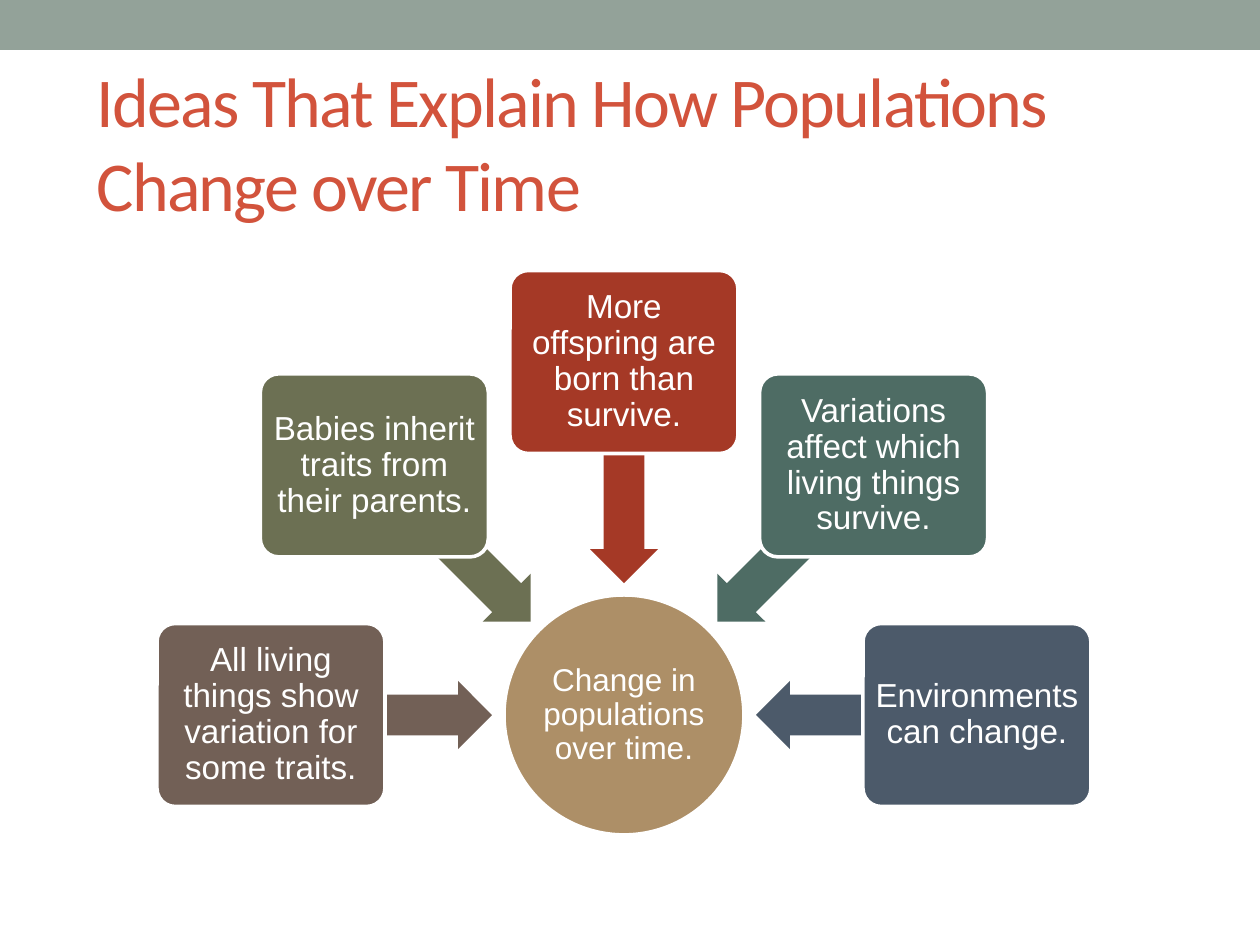
from dataclasses import dataclass
from math import cos, radians, sin

from pptx import Presentation
from pptx.dml.color import RGBColor
from pptx.enum.shapes import MSO_SHAPE
from pptx.enum.text import MSO_ANCHOR, MSO_AUTO_SIZE, PP_ALIGN
from pptx.util import Pt

EMU_PER_PX = 914400 / 126


@dataclass(frozen=True)
class Theme:
    band: str = "93A299"
    title: str = "D2533C"
    hub: str = "AD8F67"
    white: str = "FFFFFF"
    title_font: str = "Calibri"
    body_font: str = "Arial"
    title_size: int = 40
    hub_size: int = 18
    idea_size: int = 19
    outline: float = 2.08


THEME = Theme()

HUB_CENTER = (624, 715)
HUB_DIAMETER = 240
IDEA_SIZE = (228, 183)
IDEA_RADIUS = 353
ARROW_SIZE = (220, 68)
ARROW_RADIUS = 242
FIRST_ANGLE, ANGLE_STEP = 180, 45

# Clockwise from the left of the hub
IDEAS = [
    ("All living things show variation for some traits.", "726056"),
    ("Babies inherit traits from their parents.", "6C7053"),
    ("More offspring are born than survive.", "A53926"),
    ("Variations affect which living things survive.", "4E6C64"),
    ("Environments can change.", "4C5A6A"),
]


def px(length):
    return round(length * EMU_PER_PX)


def color(value):
    return RGBColor.from_string(value)


def write_text(shape, text, *, font, size, fill, align=PP_ALIGN.CENTER,
               inset=None, line_spacing=1.0, tracking=None):
    """Fill a shape with one formatted paragraph; tracking is in points."""
    frame = shape.text_frame
    frame.word_wrap = True
    frame.auto_size = MSO_AUTO_SIZE.NONE
    frame.vertical_anchor = MSO_ANCHOR.MIDDLE
    if inset is not None:
        frame.margin_left = frame.margin_right = px(inset)
        frame.margin_top = frame.margin_bottom = px(inset)
    paragraph = frame.paragraphs[0]
    paragraph.alignment = align
    paragraph.line_spacing = line_spacing
    run = paragraph.add_run()
    run.text = text
    run.font.name = font
    run.font.size = Pt(size)
    run.font.color.rgb = color(fill)
    if tracking is not None:
        run.font._element.set("spc", str(round(tracking * 100)))


def add_block(shapes, kind, center, size, fill, outline=None):
    """Add a filled preset shape placed by its center."""
    (x, y), (width, height) = center, size
    shape = shapes.add_shape(kind, px(x - width / 2), px(y - height / 2),
                             px(width), px(height))
    shape.shadow.inherit = False
    shape.fill.solid()
    shape.fill.fore_color.rgb = color(fill)
    if outline:
        shape.line.color.rgb = color(outline)
        shape.line.width = Pt(THEME.outline)
    else:
        shape.line.fill.background()
    return shape


def around_hub(angle, radius):
    x, y = HUB_CENTER
    return (x + radius * cos(radians(angle)), y + radius * sin(radians(angle)))


def add_hub(shapes, text):
    hub = add_block(shapes, MSO_SHAPE.OVAL, HUB_CENTER,
                    (HUB_DIAMETER, HUB_DIAMETER), THEME.hub, THEME.white)
    write_text(hub, text, font=THEME.body_font, size=THEME.hub_size,
               fill=THEME.white, inset=1, line_spacing=0.9)


def add_idea(shapes, text, fill, angle):
    """Add an idea box and, behind it, its arrow pointing at the hub."""
    arrow = add_block(shapes, MSO_SHAPE.LEFT_ARROW,
                      around_hub(angle, ARROW_RADIUS), ARROW_SIZE, fill)
    arrow.adjustments[0] = 0.6
    arrow.adjustments[1] = 0.5
    arrow.rotation = angle % 360
    box = add_block(shapes, MSO_SHAPE.ROUNDED_RECTANGLE,
                    around_hub(angle, IDEA_RADIUS), IDEA_SIZE, fill, THEME.white)
    box.adjustments[0] = 0.1
    write_text(box, text, font=THEME.body_font, size=THEME.idea_size,
               fill=THEME.white, inset=5, line_spacing=0.9)


def set_title(slide, text):
    title = slide.shapes.title
    title.left, title.top = px(84), px(73)
    title.width, title.height = px(1113), px(136)
    write_text(title, text, font=THEME.title_font, size=THEME.title_size,
               fill=THEME.title, align=PP_ALIGN.LEFT, tracking=-1)


def main():
    presentation = Presentation()
    presentation.slide_width, presentation.slide_height = px(1260), px(945)
    slide = presentation.slides.add_slide(presentation.slide_layouts[5])
    set_title(slide, "Ideas That Explain How Populations Change over Time")
    add_block(slide.shapes, MSO_SHAPE.RECTANGLE, (630, 25), (1260, 50), THEME.band)

    diagram = slide.shapes.add_group_shape().shapes
    add_hub(diagram, "Change in populations over time.")
    for index, (text, fill) in enumerate(IDEAS):
        add_idea(diagram, text, fill, FIRST_ANGLE + index * ANGLE_STEP)
    presentation.save("out.pptx")


if __name__ == "__main__":
    main()
